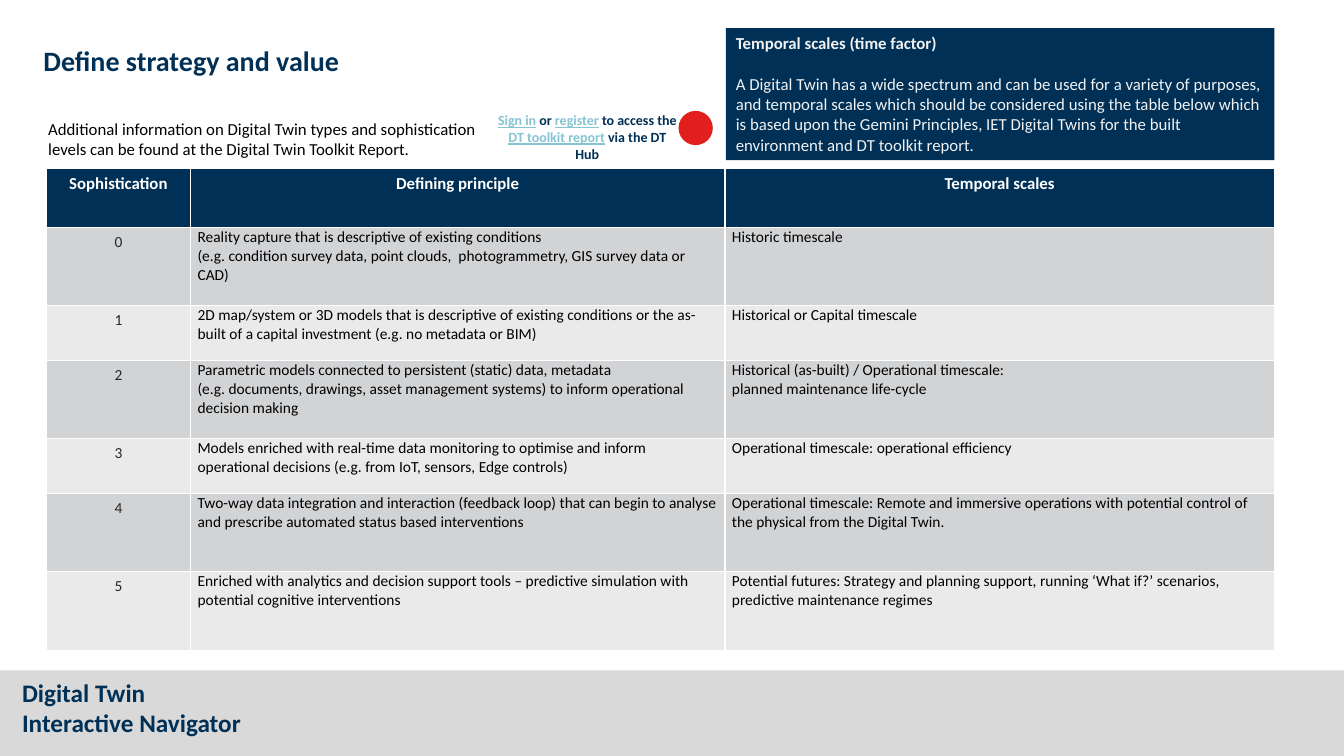
from pptx import Presentation
from pptx.dml.color import RGBColor
from pptx.enum.shapes import MSO_SHAPE
from pptx.enum.text import MSO_ANCHOR, MSO_AUTO_SIZE, PP_ALIGN
from pptx.util import Inches, Pt

RECTANGLE, OVAL = MSO_SHAPE.RECTANGLE, MSO_SHAPE.OVAL
LEFT, CENTER = PP_ALIGN.LEFT, PP_ALIGN.CENTER
TOP = MSO_ANCHOR.TOP
NO_FIT = MSO_AUTO_SIZE.NONE

NAVY = RGBColor(0x00, 0x30, 0x56)
WHITE = RGBColor(0xFF, 0xFF, 0xFF)
OFF_WHITE = RGBColor(0xF2, 0xF2, 0xF2)
BLACK = RGBColor(0x00, 0x00, 0x00)
CHARCOAL = RGBColor(0x26, 0x26, 0x26)
BAND_GREY = RGBColor(0xD9, 0xD9, 0xD9)
ROW_DARK = RGBColor(0xD2, 0xD3, 0xD5)
ROW_LIGHT = RGBColor(0xEA, 0xEA, 0xEB)
LINK_BLUE = RGBColor(0x85, 0xC4, 0xD2)
RED = RGBColor(0xE1, 0x1F, 0x1D)

COLUMN_WIDTHS = [1.43, 5.3, 5.45]
ROW_HEIGHTS = [0.59, 0.77, 0.55, 0.77, 0.55, 0.77, 0.79]
HEADINGS = ["Sophistication", "Defining principle", "Temporal scales"]
LEVELS = [
    ("Reality capture that is descriptive of existing conditions\n"
     "(e.g. condition survey data, point clouds,  photogrammetry, GIS survey data or CAD)",
     "Historic timescale"),
    ("2D map/system or 3D models that is descriptive of existing conditions or the "
     "as-built of a capital investment (e.g. no metadata or BIM)",
     "Historical or Capital timescale"),
    ("Parametric models connected to persistent (static) data, metadata\n"
     "(e.g. documents, drawings, asset management systems) to inform operational "
     "decision making",
     "Historical (as-built) / Operational timescale:\nplanned maintenance life-cycle"),
    ("Models enriched with real-time data monitoring to optimise and inform "
     "operational decisions (e.g. from IoT, sensors, Edge controls)",
     "Operational timescale: operational efficiency"),
    ("Two-way data integration and interaction (feedback loop) that can begin to "
     "analyse and prescribe automated status based interventions",
     "Operational timescale: Remote and immersive operations with potential control "
     "of the physical from the Digital Twin."),
    ("Enriched with analytics and decision support tools – predictive simulation with "
     "potential cognitive interventions",
     "Potential futures: Strategy and planning support, running ‘What if?’ scenarios, "
     "predictive maintenance regimes"),
]


class SlideBuilder:
    font_name = "Calibri"

    def __init__(self, slide):
        self.slide = slide

    def style(self, font, size, color, bold=False):
        font.name = self.font_name
        font.size = Pt(size)
        font.bold = bold
        font.color.rgb = color

    def fill_text(self, text_frame, text, size, color, bold=False, align=LEFT):
        text_frame.text = text
        for paragraph in text_frame.paragraphs:
            paragraph.alignment = align
            for run in paragraph.runs:
                self.style(run.font, size, color, bold)

    def title(self, text, left, top, width, height):
        title = self.slide.shapes.title
        title.left, title.top = Inches(left), Inches(top)
        title.width, title.height = Inches(width), Inches(height)
        title.text_frame.auto_size = NO_FIT
        title.text_frame.vertical_anchor = TOP
        self.fill_text(title.text_frame, text, 20, NAVY, bold=True)

    def shape(self, kind, fill, left, top, width, height):
        shape = self.slide.shapes.add_shape(
            kind, Inches(left), Inches(top), Inches(width), Inches(height))
        shape.shadow.inherit = False
        shape.fill.solid()
        shape.fill.fore_color.rgb = fill
        shape.line.fill.background()
        return shape

    def text_box(self, left, top, width, height):
        box = self.slide.shapes.add_textbox(
            Inches(left), Inches(top), Inches(width), Inches(height))
        box.text_frame.word_wrap = True
        return box.text_frame

    def callout(self, heading, body, left, top, width, height):
        text_frame = self.shape(RECTANGLE, NAVY, left, top, width, height).text_frame
        text_frame.word_wrap = True
        text_frame.vertical_anchor = TOP
        self.fill_text(text_frame, heading + "\n" + body, 12, OFF_WHITE)
        heading_paragraph, body_paragraph = text_frame.paragraphs
        heading_paragraph.runs[0].font.bold = True
        body_paragraph.space_before = Pt(14.6)

    def link_text(self, pieces, left, top, width, height):
        """Set (text, is_link) pieces as one centred paragraph."""
        paragraph = self.text_box(left, top, width, height).paragraphs[0]
        paragraph.alignment = CENTER
        for text, is_link in pieces:
            run = paragraph.add_run()
            run.text = text
            self.style(run.font, 10, LINK_BLUE if is_link else NAVY, bold=True)
            run.font.underline = is_link

    def cell(self, cell, text, fill, size, color, bold=False, align=LEFT):
        cell.fill.solid()
        cell.fill.fore_color.rgb = fill
        self.fill_text(cell.text_frame, text, size, color, bold, align)

    def table(self, left, top):
        table = self.slide.shapes.add_table(
            len(ROW_HEIGHTS), len(COLUMN_WIDTHS), Inches(left), Inches(top),
            Inches(sum(COLUMN_WIDTHS)), Inches(sum(ROW_HEIGHTS))).table
        table.horz_banding = False
        for column, width in zip(table.columns, COLUMN_WIDTHS):
            column.width = Inches(width)
        for row, height in zip(table.rows, ROW_HEIGHTS):
            row.height = Inches(height)
        for index, heading in enumerate(HEADINGS):
            self.cell(table.cell(0, index), heading, NAVY, 12, WHITE, True, CENTER)
        for level, descriptions in enumerate(LEVELS):
            fill = ROW_LIGHT if level % 2 else ROW_DARK
            self.cell(table.cell(level + 1, 0), str(level), fill, 11, CHARCOAL,
                      align=CENTER)
            for index, text in enumerate(descriptions, start=1):
                cell = table.cell(level + 1, index)
                cell.margin_left = cell.margin_right = Inches(0.07)
                cell.margin_top = cell.margin_bottom = Inches(0)
                self.cell(cell, text, fill, 11, BLACK)


def main():
    presentation = Presentation()
    presentation.slide_width = Inches(13.33)
    presentation.slide_height = Inches(7.5)
    slide = presentation.slides.add_slide(presentation.slide_layouts[5])
    builder = SlideBuilder(slide)

    builder.shape(RECTANGLE, BAND_GREY, 0, 6.65, 13.33, 0.85)
    builder.fill_text(builder.text_box(0.12, 6.67, 4.05, 0.71),
                      "Digital Twin\nInteractive Navigator", 18, NAVY, bold=True)
    builder.table(0.46, 1.67)
    builder.title("Define strategy and value", 0.33, 0.38, 3.5, 0.44)
    builder.callout(
        "Temporal scales (time factor)",
        "A Digital Twin has a wide spectrum and can be used for a variety of purposes, "
        "and temporal scales which should be considered using the table below which is "
        "based upon the Gemini Principles, IET Digital Twins for the built environment "
        "and DT toolkit report.",
        7.2, 0.28, 5.44, 1.31)
    builder.fill_text(builder.text_box(0.38, 1.13, 4.63, 0.5),
                      "Additional information on Digital Twin types and sophistication "
                      "levels can be found at the Digital Twin Toolkit Report.", 12, BLACK)
    builder.link_text(
        [("Sign in", True), (" or ", False), ("register", True),
         (" to access the ", False), ("DT toolkit report", True),
         (" via the DT Hub", False)],
        4.84, 1.06, 1.97, 0.61)
    builder.shape(OVAL, RED, 6.73, 1.1, 0.34, 0.34)

    presentation.save("out.pptx")


if __name__ == "__main__":
    main()
